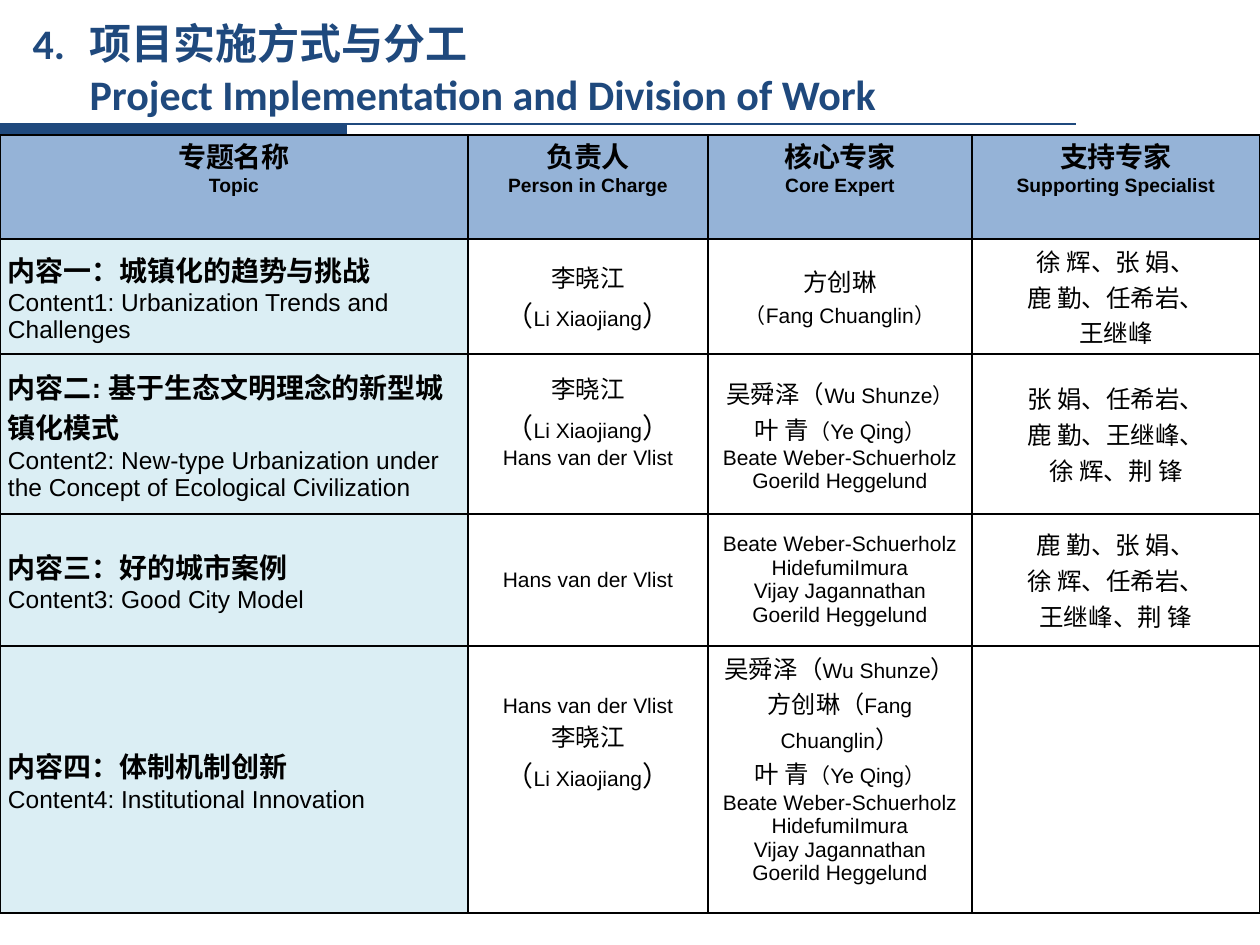
import dataclasses
import typing

import lxml.etree
import pptx
import pptx.dml.color
import pptx.enum.shapes
import pptx.enum.text
import pptx.oxml.ns
import pptx.util

PIXEL = 914400 / 126
COLORS = {"navy": "1F497D", "black": "000000", "header": "95B3D7", "topic": "DBEEF4"}
EAST_ASIAN_FONT = "Noto Sans CJK SC"
CENTER = pptx.enum.text.PP_ALIGN.CENTER
LEFT = pptx.enum.text.PP_ALIGN.LEFT
MIDDLE = pptx.enum.text.MSO_ANCHOR.MIDDLE
TOP = pptx.enum.text.MSO_ANCHOR.TOP


class Run(typing.NamedTuple):
    text: str
    size: float
    font: str = "Arial"
    bold: bool = False
    color: str = "black"


Line = list[Run]


@dataclasses.dataclass
class Cell:
    lines: list[Line]
    fill: str | None = None
    align: pptx.enum.text.PP_ALIGN = CENTER
    anchor: pptx.enum.text.MSO_ANCHOR = MIDDLE
    bottom: int = 0


def px(length: int) -> pptx.util.Emu:
    return pptx.util.Emu(round(length * PIXEL))


def rgb(name: str) -> pptx.dml.color.RGBColor:
    return pptx.dml.color.RGBColor.from_string(COLORS[name])


def latin(*names: str) -> list[Line]:
    return [[Run(name, 12)] for name in names]


def chinese(*names: str) -> list[Line]:
    return [[Run(name, 14, "Calibri")] for name in names]


def bracketed(name: str, size: float, prefix: str = "") -> Line:
    return [Run(prefix + "（", size, "Calibri"), Run(name, 12), Run("）", size, "Calibri")]


def header(title: str, subtitle: str) -> Cell:
    return Cell([[Run(title, 16, bold=True)], [Run(subtitle, 11, bold=True)]], "header", anchor=TOP)


def topic(title: str, subtitle: str) -> Cell:
    return Cell([[Run(title, 16, bold=True)], [Run(subtitle, 14)]], "topic", LEFT)


LI_XIAOJIANG = chinese("李晓江") + [bracketed("Li Xiaojiang", 16)]
YE_QING = [Run("叶 青", 14), Run("（Ye Qing）", 12)]
VLIST = latin("Hans van der Vlist")
CITY_EXPERTS = latin("Beate Weber-Schuerholz", "HidefumiImura", "Vijay Jagannathan", "Goerild Heggelund")

COLUMN_WIDTHS = [468, 240, 264, 288]
ROW_HEIGHTS = [104, 115, 160, 132, 267]
ROWS = [
    [
        header("专题名称", "Topic"),
        header("负责人", "Person in Charge"),
        header("核心专家", "Core Expert"),
        header("支持专家", "Supporting Specialist"),
    ],
    [
        topic("内容一：城镇化的趋势与挑战", "Content1: Urbanization Trends and Challenges"),
        Cell(LI_XIAOJIANG),
        Cell(chinese("方创琳") + latin("（Fang Chuanglin）")),
        Cell(chinese("徐 辉、张 娟、", "鹿 勤、任希岩、", "王继峰")),
    ],
    [
        topic(
            "内容二: 基于生态文明理念的新型城镇化模式",
            "Content2: New-type Urbanization under the Concept of Ecological Civilization",
        ),
        Cell(LI_XIAOJIANG + VLIST, bottom=28),
        Cell(
            [[Run("吴舜泽（", 14, "Calibri"), Run("Wu Shunze）", 12)], YE_QING]
            + latin("Beate Weber-Schuerholz", "Goerild Heggelund")
        ),
        Cell(chinese("张 娟、任希岩、", "鹿 勤、王继峰、", "徐 辉、荆 锋")),
    ],
    [
        topic("内容三：好的城市案例", "Content3: Good City Model"),
        Cell(VLIST),
        Cell(CITY_EXPERTS),
        Cell(chinese("鹿 勤、张 娟、", "徐 辉、任希岩、", "王继峰、荆 锋")),
    ],
    [
        topic("内容四：体制机制创新", "Content4: Institutional Innovation"),
        Cell(VLIST + LI_XIAOJIANG, bottom=70),
        Cell(
            [
                bracketed("Wu Shunze", 14, "吴舜泽"),
                bracketed("Fang Chuanglin", 13.8, "方创琳"),
                YE_QING,
            ]
            + CITY_EXPERTS,
            bottom=24,
        ),
        Cell([]),
    ],
]


def add_run(paragraph, content: Run) -> None:
    run = paragraph.add_run()
    run.text = content.text
    run.font.size = pptx.util.Pt(content.size)
    run.font.name = content.font
    run.font.bold = content.bold
    run.font.color.rgb = rgb(content.color)
    east_asian = lxml.etree.Element(pptx.oxml.ns.qn("a:ea"), typeface=EAST_ASIAN_FONT)
    run.font._element.find(pptx.oxml.ns.qn("a:latin")).addnext(east_asian)


def write_lines(text_frame, lines: list[Line], align: pptx.enum.text.PP_ALIGN) -> None:
    for index, line in enumerate(lines):
        paragraph = text_frame.add_paragraph() if index else text_frame.paragraphs[0]
        paragraph.alignment = align
        paragraph.space_before = pptx.util.Pt(0)
        for content in line:
            add_run(paragraph, content)


def add_borders(cell) -> None:
    properties = cell._tc.get_or_add_tcPr()
    for index, side in enumerate(("lnL", "lnR", "lnT", "lnB")):
        border = lxml.etree.Element(pptx.oxml.ns.qn(f"a:{side}"), w=str(pptx.util.Pt(1)))
        fill = lxml.etree.SubElement(border, pptx.oxml.ns.qn("a:solidFill"))
        lxml.etree.SubElement(fill, pptx.oxml.ns.qn("a:srgbClr"), val=COLORS["black"])
        properties.insert(index, border)


def fill_cell(cell, content: Cell) -> None:
    cell.margin_left = cell.margin_right = px(8)
    cell.margin_top = 0
    cell.margin_bottom = px(content.bottom)
    cell.vertical_anchor = content.anchor
    if content.fill:
        cell.fill.solid()
        cell.fill.fore_color.rgb = rgb(content.fill)
    else:
        cell.fill.background()
    add_borders(cell)
    write_lines(cell.text_frame, content.lines, content.align)


def add_title(slide) -> None:
    title = slide.shapes.title
    title.left, title.top, title.width, title.height = px(20), px(29), px(1191), px(78)
    frame = title.text_frame
    frame.auto_size = pptx.enum.text.MSO_AUTO_SIZE.NONE
    frame.vertical_anchor = MIDDLE
    frame.word_wrap = True
    texts = ("4.\t项目实施方式与分工", "Project Implementation and Division of Work")
    write_lines(frame, [[Run(text, 24, "Calibri", True, "navy")] for text in texts], LEFT)
    for paragraph, indent in zip(frame.paragraphs, (-57, 0)):
        properties = paragraph._p.get_or_add_pPr()
        properties.set("marL", str(px(57)))
        properties.set("indent", str(px(indent)))


def add_title_rule(slide) -> None:
    line = slide.shapes.add_connector(
        pptx.enum.shapes.MSO_CONNECTOR.STRAIGHT, 0, px(124), px(1076), px(124)
    )
    line.line.color.rgb = rgb("navy")
    line.line.width = pptx.util.Pt(1.5)
    lxml.etree.SubElement(line._element.spPr, pptx.oxml.ns.qn("a:effectLst"))
    bar = slide.shapes.add_shape(
        pptx.enum.shapes.MSO_SHAPE.RECTANGLE, 0, px(124), px(347), px(10)
    )
    bar.shadow.inherit = False
    bar.fill.solid()
    bar.fill.fore_color.rgb = rgb("navy")
    bar.line.fill.background()


def add_work_table(slide) -> None:
    table = slide.shapes.add_table(
        len(ROWS), len(COLUMN_WIDTHS), 0, px(135), px(sum(COLUMN_WIDTHS)), px(sum(ROW_HEIGHTS))
    ).table
    for column, width in zip(table.columns, COLUMN_WIDTHS):
        column.width = px(width)
    for row, height, contents in zip(table.rows, ROW_HEIGHTS, ROWS):
        row.height = px(height)
        for cell, content in zip(row.cells, contents):
            fill_cell(cell, content)


def main() -> None:
    presentation = pptx.Presentation()
    presentation.slide_width, presentation.slide_height = px(1260), px(945)
    slide = presentation.slides.add_slide(presentation.slide_layouts[5])
    add_title_rule(slide)
    add_title(slide)
    add_work_table(slide)
    presentation.save("out.pptx")


if __name__ == "__main__":
    main()
